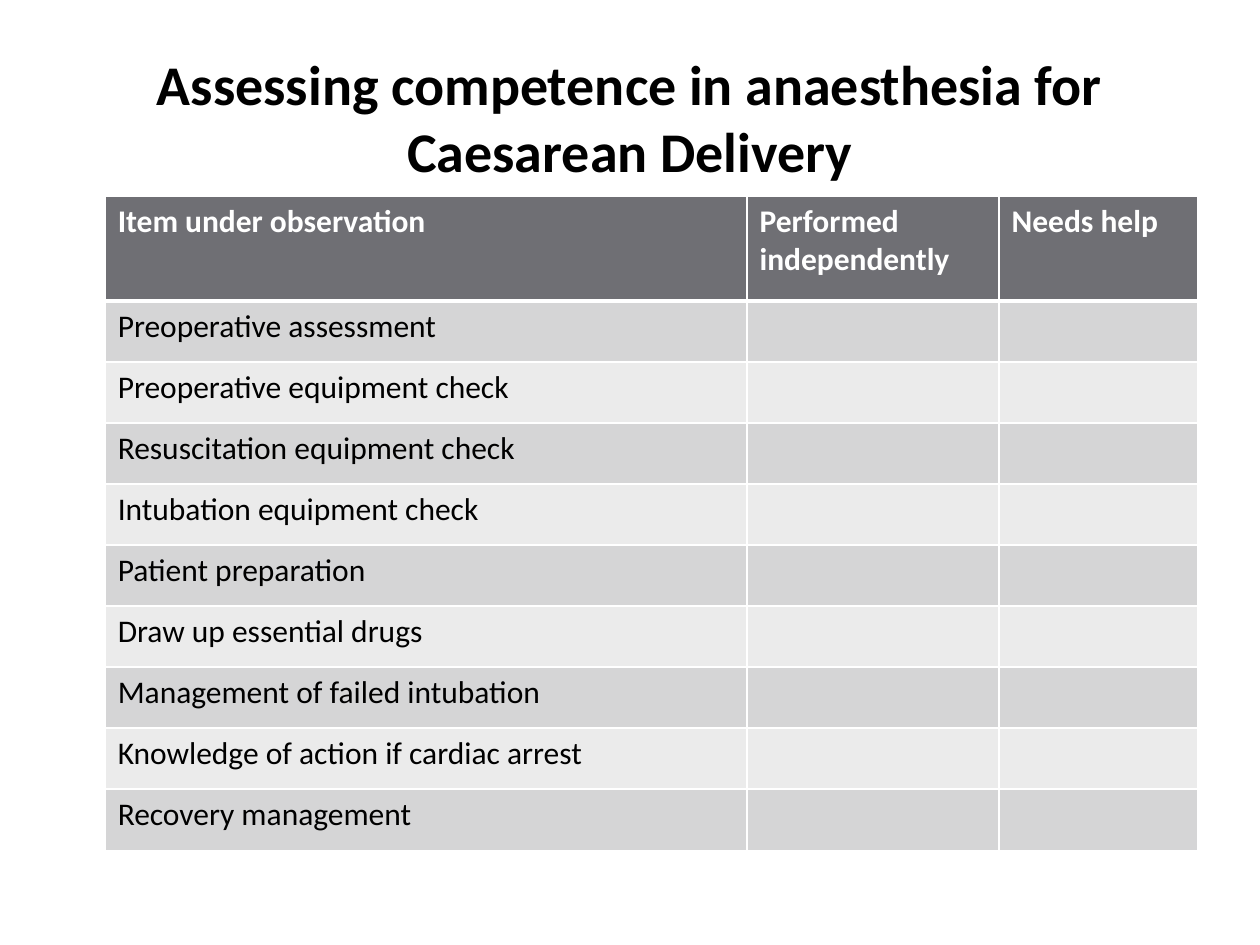
import pptx
import pptx.dml.color
import pptx.enum.text
import pptx.oxml
import pptx.oxml.ns
import pptx.util
from pptx.util import Cm

FONT = "Calibri"
BLACK, WHITE = "000000", "FFFFFF"
HEADER_FILL = "6F6F74"
BAND_FILLS = ("D5D5D6", "EBEBEB")
TITLE = "Assessing competence in anaesthesia for Caesarean Delivery"
HEADINGS = ("Item under observation", "Performed independently", "Needs help")
ITEMS = (
    "Preoperative assessment",
    "Preoperative equipment check",
    "Resuscitation equipment check",
    "Intubation equipment check",
    "Patient preparation",
    "Draw up essential drugs",
    "Management of failed intubation",
    "Knowledge of action if cardiac arrest",
    "Recovery management",
)
COLUMN_WIDTHS = (Cm(12.94), Cm(5.08), Cm(4.01))
HEADER_HEIGHT, ITEM_HEIGHT = Cm(2.12), Cm(1.23)


def color(hex_string):
    return pptx.dml.color.RGBColor.from_string(hex_string)


def add_run(paragraph, text, size, hex_color, bold):
    run = paragraph.add_run()
    run.text = text
    run.font.name = FONT
    run.font.size = pptx.util.Pt(size)
    run.font.bold = bold
    run.font.color.rgb = color(hex_color)


def set_border(cell, side, width):
    """Draw a white line on one side of the cell: L, R, T or B."""
    cell_properties = cell._tc.get_or_add_tcPr()
    cell_properties.append(pptx.oxml.parse_xml(
        f'<a:ln{side} {pptx.oxml.ns.nsdecls("a")} w="{pptx.util.Pt(width)}">'
        f'<a:solidFill><a:srgbClr val="{WHITE}"/></a:solidFill></a:ln{side}>'
    ))


def format_cell(cell, text, row_index):
    is_header = row_index == 0
    widths = {
        "L": 1,
        "R": 1,
        "T": 3 if row_index == 1 else 1,
        "B": 3 if is_header else 1,
    }
    for side, width in widths.items():
        set_border(cell, side, width)
    cell.fill.solid()
    fill = HEADER_FILL if is_header else BAND_FILLS[(row_index - 1) % 2]
    cell.fill.fore_color.rgb = color(fill)
    if text:
        text_color = WHITE if is_header else BLACK
        add_run(cell.text_frame.paragraphs[0], text, 18, text_color, is_header)


def add_title(slide):
    title = slide.shapes.title
    title.left, title.top = Cm(1.27), Cm(0.76)
    title.width, title.height = Cm(22.86), Cm(3.18)
    frame = title.text_frame
    frame.auto_size = pptx.enum.text.MSO_AUTO_SIZE.NONE
    frame.vertical_anchor = pptx.enum.text.MSO_ANCHOR.MIDDLE
    paragraph = frame.paragraphs[0]
    paragraph.alignment = pptx.enum.text.PP_ALIGN.CENTER
    add_run(paragraph, TITLE, 32, BLACK, True)


def add_checklist(slide):
    rows = [HEADINGS] + [(item, "", "") for item in ITEMS]
    heights = [HEADER_HEIGHT] + [ITEM_HEIGHT] * len(ITEMS)
    table = slide.shapes.add_table(
        len(rows), len(HEADINGS), Cm(2.12), Cm(3.95),
        sum(COLUMN_WIDTHS), sum(heights),
    ).table
    for column, width in zip(table.columns, COLUMN_WIDTHS):
        column.width = width
    for row_index, (row, height, texts) in enumerate(zip(table.rows, heights, rows)):
        row.height = height
        for cell, text in zip(row.cells, texts):
            format_cell(cell, text, row_index)


def main():
    presentation = pptx.Presentation()
    presentation.slide_width = Cm(25.4)
    presentation.slide_height = Cm(19.05)
    title_only_layout = presentation.slide_layouts[5]
    slide = presentation.slides.add_slide(title_only_layout)
    add_title(slide)
    add_checklist(slide)
    presentation.save("out.pptx")


if __name__ == "__main__":
    main()
